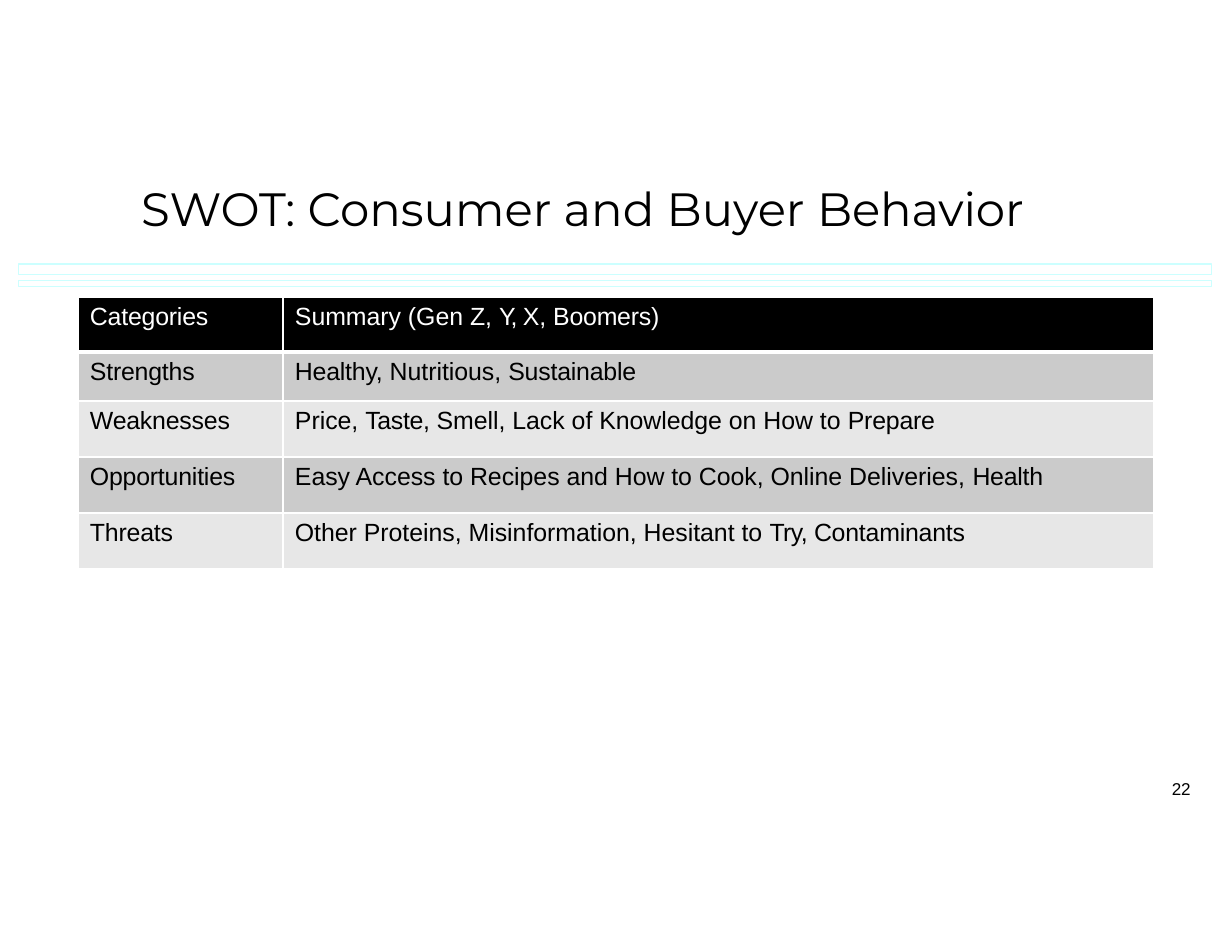
from lxml.etree import SubElement
from pptx import Presentation
from pptx.dml.color import RGBColor
from pptx.enum.shapes import MSO_SHAPE
from pptx.enum.text import MSO_ANCHOR, PP_ALIGN
from pptx.oxml.ns import qn
from pptx.util import Emu, Pt

COLORS = {"ink": "000000", "paper": "FFFFFF", "rule": "CCFFFF",
          "header": "000000", "dark_band": "CBCBCB", "light_band": "E7E7E7"}

# Each cell is a list of (text, letter spacing in points).
SWOT_ROWS = [
    [[("Categories", -0.1)],
     [("Summary (Gen Z, ", 0), ("Y, ", -1.1), ("X, ", 0), ("Boomers)", -0.1)]],
    [[("Strengths", -0.1)],
     [("Healthy, ", -0.1), ("Nutritious, ", 0), ("Sustainable", -0.1)]],
    [[("Weaknesses", -0.1)],
     [("Price, ", 0), ("Taste, ", -0.2),
      ("Smell, Lack of Knowledge on How to ", 0), ("Prepare", -0.1)]],
    [[("Opportunities", -0.1)],
     [("Easy Access to Recipes and How to Cook, Online Deliveries, ", 0),
      ("Health", -0.1)]],
    [[("Threats", -0.1)],
     [("Other Proteins, Misinformation, Hesitant to ", 0), ("Try, ", -0.4),
      ("Contaminants", -0.1)]],
]
COLUMN_WIDTHS = [205, 871]
ROW_HEIGHTS = [55, 49, 56, 56, 56]


def px(length):
    return Emu(round(length * 914400 / 112))


def color(name):
    return RGBColor.from_string(COLORS[name])


def place(shape, box):
    shape.left, shape.top, shape.width, shape.height = map(px, box)


def set_margins(target, left=0, top=0):
    """Set the insets of a text frame or a table cell."""
    target.margin_left, target.margin_top = px(left), px(top)
    target.margin_right = target.margin_bottom = 0


def write(frame, spans, size, font="Arial", ink="ink", line_spacing=None):
    para = frame.paragraphs[0]
    para.alignment = PP_ALIGN.LEFT
    if line_spacing:
        para.line_spacing = Pt(line_spacing)
    for text, tracking in spans:
        span = para.add_run()
        span.text = text
        span.font.name = font
        span.font.size = Pt(size)
        span.font.color.rgb = color(ink)
        span._r.get_or_add_rPr().set("spc", str(round(tracking * 100)))


def add_title(slide, box):
    title = slide.shapes.title
    place(title, box)
    frame = title.text_frame
    frame.word_wrap = True
    frame.vertical_anchor = MSO_ANCHOR.TOP
    set_margins(frame, left=103, top=48)
    write(frame, [("SWOT: Consumer and Buyer ", 0), ("Behavior", -0.1)],
          size=30, font="Montserrat")


def add_double_rule(slide, box):
    """Draw a thick and a thin outlined bar at the top and bottom of the box."""
    left, top, width, height = box
    for offset, bar_height in ((0, 11), (height - 6, 6)):
        bar = slide.shapes.add_shape(
            MSO_SHAPE.RECTANGLE, px(left), px(top + offset), px(width), px(bar_height))
        bar.shadow.inherit = False
        bar.fill.background()
        bar.line.color.rgb = color("rule")
        bar.line.width = Pt(0.67)


def set_borders(cell, widths):
    properties = cell._tc.get_or_add_tcPr()
    for position, (side, width) in enumerate(widths.items()):
        line = SubElement(properties, qn(f"a:{side}"), w=str(Pt(width)))
        fill = SubElement(line, qn("a:solidFill"))
        SubElement(fill, qn("a:srgbClr"), val=COLORS["paper"])
        properties.remove(line)
        properties.insert(position, line)


def add_swot_table(slide, box):
    table = slide.shapes.add_table(
        len(SWOT_ROWS), len(COLUMN_WIDTHS), *map(px, box)).table
    for column, width in zip(table.columns, COLUMN_WIDTHS):
        column.width = px(width)
    for index, (row, height, contents) in enumerate(
            zip(table.rows, ROW_HEIGHTS, SWOT_ROWS)):
        row.height = px(height)
        band = "dark_band" if index % 2 else "light_band"
        for cell, spans in zip(row.cells, contents):
            set_margins(cell, left=12, top=6)
            cell.fill.solid()
            cell.fill.fore_color.rgb = color("header" if index == 0 else band)
            write(cell.text_frame, spans, size=16,
                  ink="paper" if index == 0 else "ink")
            set_borders(cell, {"lnL": 0.75, "lnR": 0.75,
                               "lnT": 2.25 if index == 1 else 0.75,
                               "lnB": 2.25 if index == 0 else 0.75})


def add_page_number(slide, box):
    frame = slide.shapes.add_textbox(*map(px, box)).text_frame
    frame.word_wrap = True
    set_margins(frame, left=4)
    write(frame, [("22", -0.2)], size=11, line_spacing=13.2)


def main():
    deck = Presentation()
    deck.slide_width, deck.slide_height = px(1232), px(952)
    slide = deck.slides.add_slide(deck.slide_layouts[5])
    add_double_rule(slide, (19, 264, 1193, 23))
    add_title(slide, (38, 132, 1156, 131))
    add_page_number(slide, (1168, 778, 30, 22))
    add_swot_table(slide, (78, 297, sum(COLUMN_WIDTHS), sum(ROW_HEIGHTS)))
    deck.save("out.pptx")


if __name__ == "__main__":
    main()
